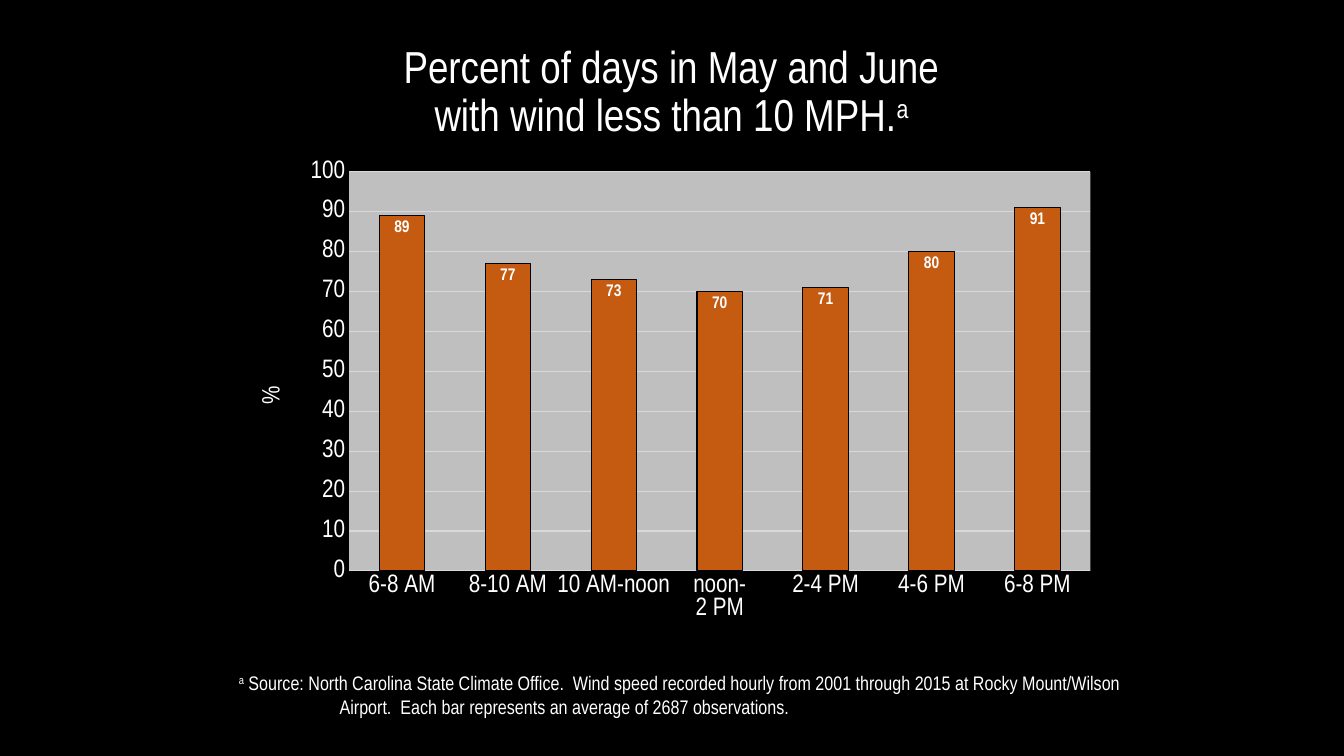
import dataclasses
import typing

import lxml.etree
import pptx
import pptx.chart.data
import pptx.dml.color
import pptx.enum.chart
import pptx.enum.text
import pptx.oxml.ns
import pptx.util

Inches = pptx.util.Inches
Pt = pptx.util.Pt

BLACK = pptx.dml.color.RGBColor(0x00, 0x00, 0x00)
WHITE = pptx.dml.color.RGBColor(0xFF, 0xFF, 0xFF)
ORANGE = pptx.dml.color.RGBColor(0xC5, 0x5A, 0x11)
GRID_GRAY = pptx.dml.color.RGBColor(0xD9, 0xD9, 0xD9)
PLOT_GRAY = "BFBFBF"

TEXT_FONT = "Arial Narrow"
TITLE_FORMAT = {"name": TEXT_FONT, "size": Pt(32), "bold": False}
AXIS_FORMAT = {"name": TEXT_FONT, "size": Pt(18), "bold": False}
VALUE_FORMAT = {"name": TEXT_FONT, "size": Pt(12), "bold": True}
SOURCE_FORMAT = {"name": TEXT_FONT, "size": Pt(14)}


@dataclasses.dataclass(frozen=True)
class Period:
    hours: str
    calm_percent: int


PERIODS = [
    Period("6-8 AM", 89),
    Period("8-10 AM", 77),
    Period("10 AM-noon", 73),
    Period("noon-\n2 PM", 70),
    Period("2-4 PM", 71),
    Period("4-6 PM", 80),
    Period("6-8 PM", 91),
]


def apply_format(font: typing.Any, values: dict[str, typing.Any]) -> None:
    for attribute, value in values.items():
        setattr(font, attribute, value)
    font.color.rgb = WHITE


def add_text(paragraph: typing.Any, text: str, values: dict[str, typing.Any],
             superscript: bool = False) -> None:
    run = paragraph.add_run()
    run.text = text
    apply_format(run.font, values)
    if superscript:
        run.font._element.set("baseline", "30000")


def add_chart_node(parent: typing.Any, tag: str, value: str) -> None:
    node = lxml.etree.SubElement(parent, pptx.oxml.ns.qn(f"c:{tag}"))
    node.set("val", value)


def place_chart_part(part: typing.Any, index: int, target: str | None,
                     fractions: dict[str, float]) -> None:
    """Fix a chart part at fractions of the chart area."""
    layout_tag = pptx.oxml.ns.qn("c:layout")
    for old_layout in part.findall(layout_tag):
        part.remove(old_layout)
    layout = part.makeelement(layout_tag)
    part.insert(index, layout)
    manual = lxml.etree.SubElement(layout, pptx.oxml.ns.qn("c:manualLayout"))
    if target:
        add_chart_node(manual, "layoutTarget", target)
    for side in ("x", "y"):
        add_chart_node(manual, f"{side}Mode", "edge")
    for side, fraction in fractions.items():
        add_chart_node(manual, side, str(fraction))


def fill_plot_area(plot_area: typing.Any) -> None:
    properties = lxml.etree.SubElement(plot_area, pptx.oxml.ns.qn("c:spPr"))
    fill = lxml.etree.SubElement(properties, pptx.oxml.ns.qn("a:solidFill"))
    color = lxml.etree.SubElement(fill, pptx.oxml.ns.qn("a:srgbClr"))
    color.set("val", PLOT_GRAY)


def format_line(line: typing.Any, color: pptx.dml.color.RGBColor) -> None:
    line.color.rgb = color
    line.width = Pt(0.75)


def add_title(slide: typing.Any) -> None:
    title = slide.shapes.title
    title.left, title.top = Inches(2.35), Inches(0.2)
    title.width, title.height = Inches(8.62), Inches(1.45)
    frame = title.text_frame
    frame.auto_size = pptx.enum.text.MSO_AUTO_SIZE.NONE
    frame.vertical_anchor = pptx.enum.text.MSO_ANCHOR.MIDDLE
    heading = frame.paragraphs[0]
    heading.alignment = pptx.enum.text.PP_ALIGN.CENTER
    heading.line_spacing = 0.9
    add_text(heading, "Percent of days in May and June", TITLE_FORMAT)
    heading.add_line_break()
    add_text(heading, "with wind less than 10 MPH.", TITLE_FORMAT)
    add_text(heading, "a", TITLE_FORMAT, superscript=True)


def format_axes(chart: typing.Any) -> None:
    hours, percent = chart.category_axis, chart.value_axis
    for axis in (hours, percent):
        axis.major_tick_mark = pptx.enum.chart.XL_TICK_MARK.NONE
        axis.minor_tick_mark = pptx.enum.chart.XL_TICK_MARK.NONE
        apply_format(axis.tick_labels.font, AXIS_FORMAT)
    format_line(hours.format.line, GRID_GRAY)
    percent.format.line.fill.background()
    percent.minimum_scale, percent.maximum_scale = 0, 100
    percent.major_unit = 10
    percent.has_major_gridlines = True
    format_line(percent.major_gridlines.format.line, GRID_GRAY)

    unit = percent.axis_title
    add_text(unit.text_frame.paragraphs[0], "%", AXIS_FORMAT)
    body = unit.text_frame._txBody.find(pptx.oxml.ns.qn("a:bodyPr"))
    body.set("rot", "-5400000")
    body.set("vert", "horz")
    place_chart_part(unit._element, 1, None, {"x": 0.02, "y": 0.48})


def add_wind_chart(slide: typing.Any) -> None:
    wind = pptx.chart.data.CategoryChartData()
    wind.categories = [period.hours for period in PERIODS]
    wind.add_series("Series 1", [period.calm_percent for period in PERIODS])
    chart = slide.shapes.add_chart(
        pptx.enum.chart.XL_CHART_TYPE.COLUMN_CLUSTERED,
        Inches(2.35), Inches(1.5), Inches(8.62), Inches(4.76), wind).chart
    chart.has_title = False
    chart.has_legend = False
    chart.font.name, chart.font.size = "Calibri", Pt(10)
    format_axes(chart)

    plot = chart.plots[0]
    plot.gap_width, plot.overlap = 134, -27
    plot.vary_by_categories = False
    bars = plot.series[0]
    bars.format.fill.solid()
    bars.format.fill.fore_color.rgb = ORANGE
    format_line(bars.format.line, BLACK)
    values = bars.data_labels
    values.show_value = True
    values.position = pptx.enum.chart.XL_LABEL_POSITION.INSIDE_END
    apply_format(values.font, VALUE_FORMAT)

    plot_area = plot._element.getparent()
    place_chart_part(plot_area, 0, "inner",
                     {"x": 0.129, "y": 0.043, "w": 0.853, "h": 0.832})
    fill_plot_area(plot_area)


def add_source_note(slide: typing.Any) -> None:
    frame = slide.shapes.add_textbox(
        Inches(2.27), Inches(6.61), Inches(8.98), Inches(0.57)).text_frame
    frame.word_wrap = True
    frame.auto_size = pptx.enum.text.MSO_AUTO_SIZE.SHAPE_TO_FIT_TEXT
    note = frame.paragraphs[0]
    hanging = Inches(1)
    indents = note._p.get_or_add_pPr()
    indents.set("marL", str(hanging))
    indents.set("indent", str(-hanging))
    add_text(note, "a", SOURCE_FORMAT, superscript=True)
    add_text(note, " Source: North Carolina State Climate Office.  Wind speed "
             "recorded hourly from 2001 through 2015 at Rocky Mount/Wilson "
             "Airport.  Each bar represents an average of 2687 observations.",
             SOURCE_FORMAT)


def main() -> None:
    deck = pptx.Presentation()
    deck.slide_width, deck.slide_height = Inches(13.33), Inches(7.5)
    slide = deck.slides.add_slide(deck.slide_layouts[5])
    slide.background.fill.solid()
    slide.background.fill.fore_color.rgb = BLACK
    add_title(slide)
    add_wind_chart(slide)
    add_source_note(slide)
    deck.save("out.pptx")


if __name__ == "__main__":
    main()
